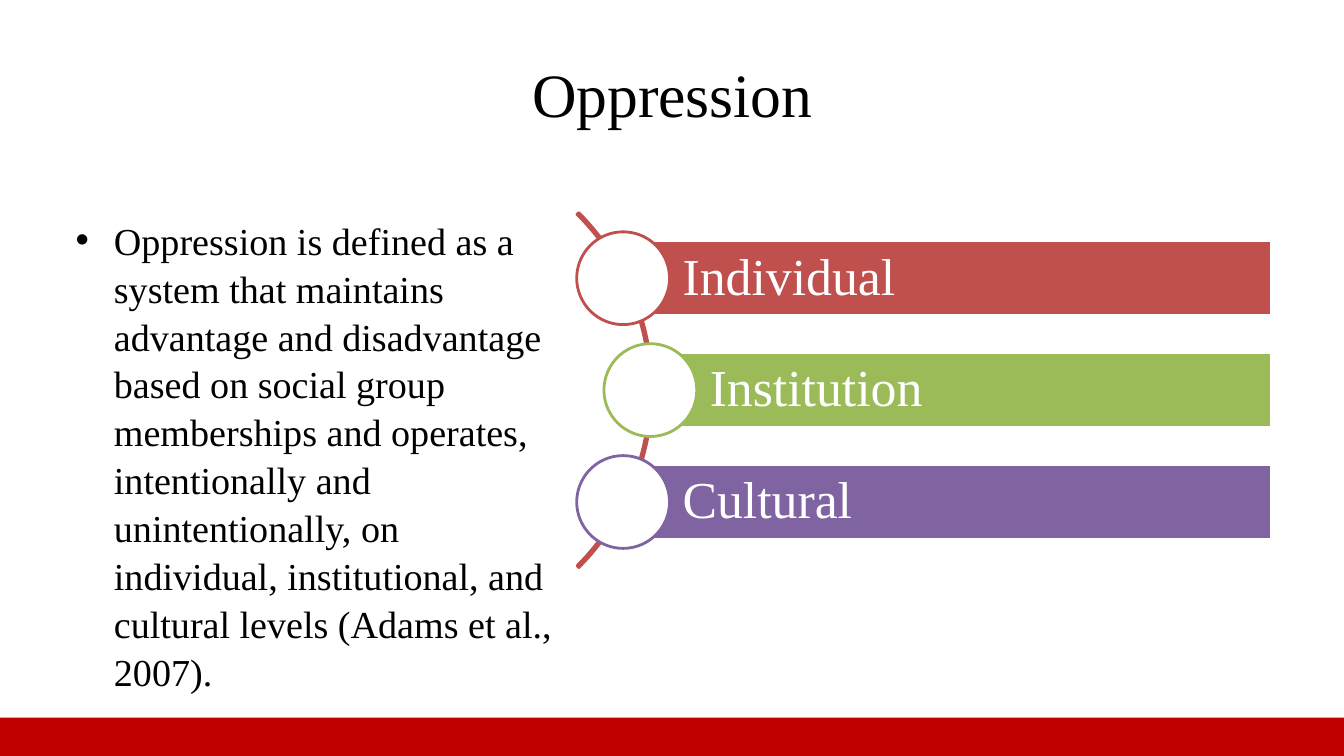
"""Builds the Oppression slide with a definition and three levels along an arc."""
from dataclasses import dataclass

from lxml import etree
from pptx import Presentation
from pptx.dml.color import RGBColor
from pptx.enum.shapes import MSO_SHAPE
from pptx.enum.text import MSO_ANCHOR, MSO_AUTO_SIZE, PP_ALIGN
from pptx.oxml.ns import qn
from pptx.util import Inches, Pt

ARC, BAR, CIRCLE = MSO_SHAPE.BLOCK_ARC, MSO_SHAPE.RECTANGLE, MSO_SHAPE.OVAL
TOP, MIDDLE = MSO_ANCHOR.TOP, MSO_ANCHOR.MIDDLE
LEFT, CENTER = PP_ALIGN.LEFT, PP_ALIGN.CENTER
NO_AUTOFIT = MSO_AUTO_SIZE.NONE


@dataclass(frozen=True)
class Theme:
    """Holds the colours and type sizes."""
    font: str = "Times New Roman"
    ink: str = "000000"
    paper: str = "FFFFFF"
    footer: str = "C00000"
    levels: tuple = ("C0504D", "9BBB59", "8064A2")
    title_size: float = 44
    body_size: float = 27.2
    level_size: float = 37
    line_width: float = 2


def write_text(shape, text, *, font, size, color, align=LEFT, anchor=TOP,
               left_inset=0.1, inset=0.05, spacing=1.0, hanging=None):
    """Writes one formatted paragraph into a shape."""
    frame = shape.text_frame
    frame.text = text
    frame.word_wrap = True
    frame.auto_size = NO_AUTOFIT
    frame.vertical_anchor = anchor
    frame.margin_left, frame.margin_right = Inches(left_inset), Inches(0.1)
    frame.margin_top = frame.margin_bottom = Inches(inset)
    paragraph = frame.paragraphs[0]
    paragraph.alignment = align
    paragraph.line_spacing = spacing
    paragraph.space_before = Pt(0)
    if hanging:
        properties = paragraph._p.get_or_add_pPr()
        properties.set("marL", str(Inches(hanging)))
        properties.set("indent", str(-Inches(hanging)))
        etree.SubElement(properties, qn("a:buFont")).set("typeface", "Arial")
        etree.SubElement(properties, qn("a:buChar")).set("char", "•")
    run_font = paragraph.runs[0].font
    run_font.name, run_font.size = font, Pt(size)
    run_font.color.rgb = RGBColor.from_string(color)


class SlideBuilder:
    """Draws themed elements on the current slide."""

    def __init__(self, slide, theme):
        """Keeps the slide and its theme."""
        self.slide, self.theme = slide, theme

    def placeholder(self, index, text, box, **text_format):
        """Moves and fills a template placeholder."""
        shape = self.slide.placeholders[index]
        shape.left, shape.top, shape.width, shape.height = map(Inches, box)
        write_text(shape, text, font=self.theme.font, color=self.theme.ink, **text_format)

    def shape(self, kind, box, fill=None, line=None):
        """Adds a preset shape with an optional fill and outline."""
        shape = self.slide.shapes.add_shape(kind, *map(Inches, box))
        shape.shadow.inherit = False
        if fill:
            shape.fill.solid()
            shape.fill.fore_color.rgb = RGBColor.from_string(fill)
        else:
            shape.fill.background()
        if line:
            shape.line.color.rgb = RGBColor.from_string(line)
            shape.line.width = Pt(self.theme.line_width)
        else:
            shape.line.fill.background()
        return shape

    def arc(self, box, color):
        """Adds the thin arc that links the levels."""
        arc = self.shape(ARC, box, line=color)
        for position, value in enumerate((189, 27, 0.005)):
            arc.adjustments[position] = value

    def level(self, text, color, center_x, center_y):
        """Adds a labelled bar with a circle at its left end."""
        right, height, diameter = 12.61, 0.74, 0.92
        theme = self.theme
        bar = self.shape(BAR, (center_x, center_y - height / 2, right - center_x, height),
                         fill=color, line=theme.paper)
        write_text(bar, text, font=theme.font, size=theme.level_size, color=theme.paper,
                   anchor=MIDDLE, left_inset=0.59, inset=0.1, spacing=0.9)
        self.shape(CIRCLE, (center_x - diameter / 2, center_y - diameter / 2, diameter, diameter),
                   fill=theme.paper, line=color)


def main():
    """Builds and saves the presentation."""
    presentation = Presentation()
    presentation.slide_width, presentation.slide_height = Inches(13.33), Inches(7.5)
    theme = Theme()
    slide = presentation.slides.add_slide(presentation.slide_layouts[1])
    builder = SlideBuilder(slide, theme)

    builder.placeholder(0, "Oppression", (0.67, 0.3, 12, 1.25),
                        size=theme.title_size, align=CENTER, anchor=MIDDLE)
    builder.placeholder(
        1,
        "Oppression is defined as a system that maintains advantage and disadvantage "
        "based on social group memberships and operates, intentionally and "
        "unintentionally, on individual, institutional, and cultural levels "
        "(Adams et al., 2007).",
        (0.65, 2.08, 5.03, 3.89), size=theme.body_size, spacing=1.05, hanging=0.38)

    builder.arc((1.49, 1.38, 4.98, 4.98), theme.levels[0])
    labels = ("Individual", "Institution", "Cultural")
    centers_x = (6.18, 6.45, 6.18)
    for row, (label, color, center_x) in enumerate(zip(labels, theme.levels, centers_x)):
        builder.level(label, color, center_x, 2.76 + 1.11 * row)

    builder.shape(BAR, (0, 7.12, 13.33, 0.38), fill=theme.footer)
    presentation.save("out.pptx")


if __name__ == "__main__":
    main()
